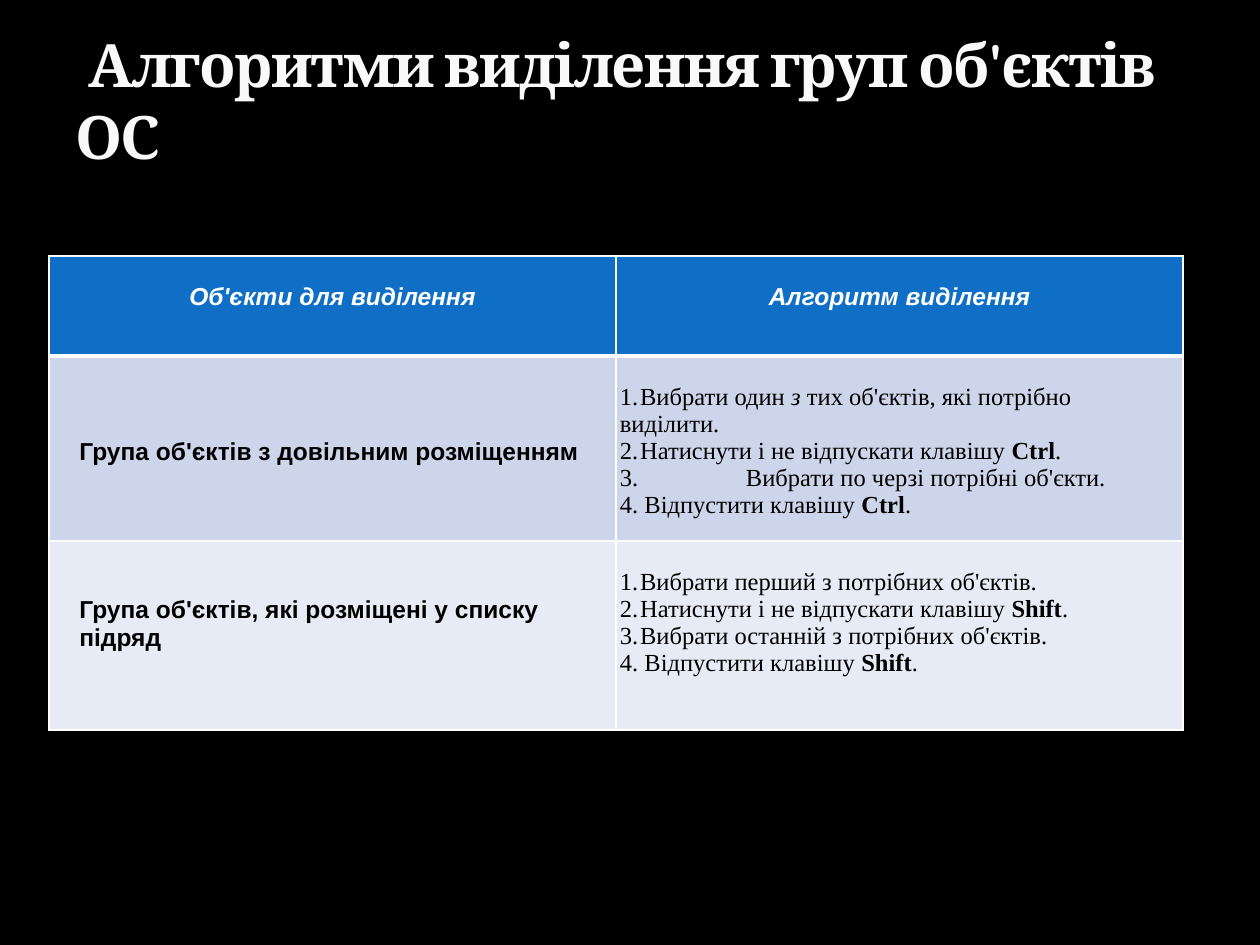
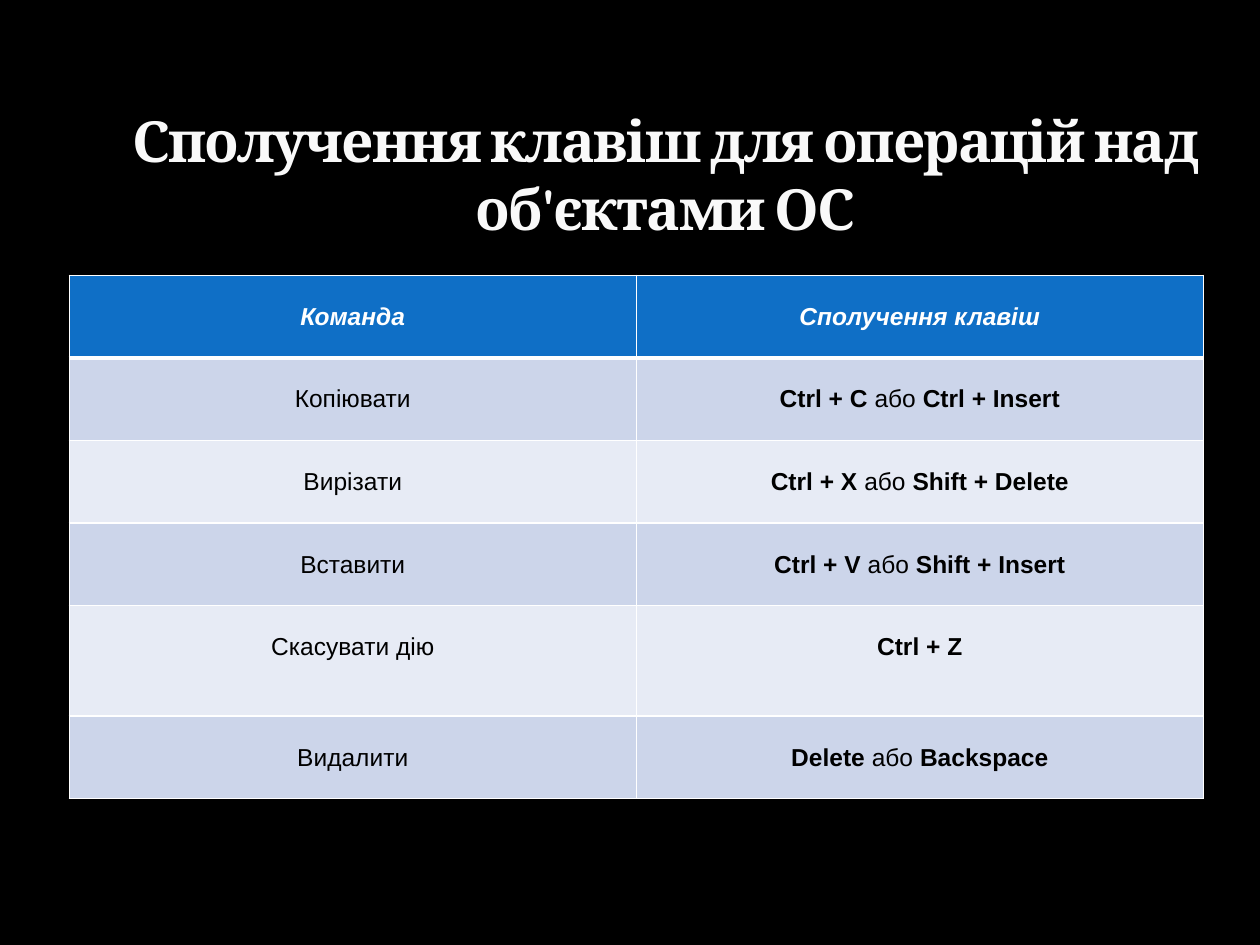
from lxml import etree
from pptx import Presentation
from pptx.dml.color import RGBColor
from pptx.enum.text import MSO_ANCHOR, MSO_AUTO_SIZE, PP_ALIGN
from pptx.oxml.ns import qn
from pptx.util import Emu, Inches, Pt

LEFT, CENTER = PP_ALIGN.LEFT, PP_ALIGN.CENTER
BOTTOM = MSO_ANCHOR.BOTTOM
NO_AUTOFIT = MSO_AUTO_SIZE.NONE
TITLE_ONLY = 5

COLORS = {
    "background": "000000",
    "title": "F9F9F9",
    "title_outline": "04566D",
    "header": "0F6FC6",
    "header_text": "FFFFFF",
    "odd_row": "CCD5EA",
    "even_row": "E7EBF5",
    "text": "000000",
    "border": "FFFFFF",
}
SANS, SERIF, TITLE_FONT = "Arial", "Times New Roman", "Cambria"
TEXT_SIZE = 14
SIDE_INSET = 0.03
LINE_GAP = 0.22
NUMBER_TAB = 0.16
WIDE_TAB = 1


def color(name):
    return RGBColor.from_string(COLORS[name])


def add_solid_fill(line, name, alpha=None):
    fill = etree.SubElement(line, qn("a:solidFill"))
    value = etree.SubElement(fill, qn("a:srgbClr"), val=COLORS[name])
    if alpha:
        etree.SubElement(value, qn("a:alpha"), val=str(alpha * 1000))


def keys(*names):
    """Bold key names joined by a plain word."""
    runs = []
    for index, name in enumerate(names):
        if index:
            runs += [(" або ", "")]
        runs += [(name, "b")]
    return [runs]


class Deck:
    """Holds the style and the current slide; lengths are percent of the slide."""

    def __init__(self):
        self.presentation = Presentation()
        self.presentation.slide_width = Inches(10)
        self.presentation.slide_height = Inches(7.5)
        background = self.presentation.slide_master.background.fill
        background.solid()
        background.fore_color.rgb = color("background")
        self.slide = None

    def across(self, percent):
        return Emu(round(self.presentation.slide_width * percent / 100))

    def down(self, percent):
        return Emu(round(self.presentation.slide_height * percent / 100))

    def add_slide(self):
        layout = self.presentation.slide_layouts[TITLE_ONLY]
        self.slide = self.presentation.slides.add_slide(layout)

    def add_run(self, paragraph, text, font, size, color_name, flags=""):
        run = paragraph.add_run()
        run.text = text
        run.font.name = font
        run.font.size = Pt(size)
        run.font.bold = "b" in flags
        run.font.italic = "i" in flags
        run.font.color.rgb = color(color_name)
        return run

    def add_title(self, text, left, top, size, alignment, indent=0):
        title = self.slide.shapes.title
        title.left, title.top = self.across(left), self.down(top)
        title.width, title.height = self.across(90), self.down(16.53)
        frame = title.text_frame
        frame.auto_size = NO_AUTOFIT
        frame.vertical_anchor = BOTTOM
        paragraph = frame.paragraphs[0]
        paragraph.alignment = alignment
        paragraph._p.get_or_add_pPr().set("indent", str(Inches(indent)))
        run = self.add_run(paragraph, text, TITLE_FONT, size, "title", "b")
        properties = run._r.get_or_add_rPr()
        properties.set("spc", "-100")
        outline = etree.Element(qn("a:ln"), w=str(Pt(0.25)))
        add_solid_fill(outline, "title_outline", alpha=25)
        properties.insert(0, outline)

    def add_table(self, left, top, row_heights):
        height = self.down(sum(row_heights))
        frame = self.slide.shapes.add_table(
            len(row_heights), 2, self.across(left), self.down(top),
            self.across(90), height)
        for row, row_height in zip(frame.table.rows, row_heights):
            row.height = self.down(row_height)
        return frame.table

    def style_cell(self, cell, row, top, left):
        cell.margin_left, cell.margin_right = Inches(left), Inches(SIDE_INSET)
        cell.margin_top, cell.margin_bottom = Inches(top), 0
        properties = cell._tc.get_or_add_tcPr()
        thick_side = {0: "B", 1: "T"}.get(row)
        for side in "LRTB":
            width = Pt(3 if side == thick_side else 1)
            border = etree.SubElement(properties, qn(f"a:ln{side}"), w=str(width))
            add_solid_fill(border, "border")
        fill_name = "header" if row == 0 else ("even_row", "odd_row")[row % 2]
        cell.fill.solid()
        cell.fill.fore_color.rgb = color(fill_name)

    def fill_cell(self, table, row, column, lines, font=SANS, alignment=CENTER,
                  top=LINE_GAP, left=SIDE_INSET, tabs=()):
        """Each line is a list of (text, flags) runs; tabs gives one stop a line."""
        cell = table.cell(row, column)
        self.style_cell(cell, row, top, left)
        color_name = "text" if row else "header_text"
        frame = cell.text_frame
        for index, runs in enumerate(lines):
            paragraph = frame.add_paragraph() if index else frame.paragraphs[0]
            paragraph.alignment = alignment
            if tabs:
                stops = etree.SubElement(paragraph._p.get_or_add_pPr(), qn("a:tabLst"))
                etree.SubElement(stops, qn("a:tab"), pos=str(Inches(tabs[index])), algn="l")
            for text, flags in runs:
                self.add_run(paragraph, text, font, TEXT_SIZE, color_name, flags)

    def fill_header(self, table, labels):
        for column, label in enumerate(labels):
            self.fill_cell(table, 0, column, [[(label, "bi")]])


def build_selection_slide(deck):
    deck.add_slide()
    deck.add_title("Алгоритми виділення груп об'єктів ОС", 5, 2.27, 34.2, LEFT, indent=0.1)
    table = deck.add_table(3.9, 27.07, [10.6, 19.6, 20])
    deck.fill_header(table, ["Об'єкти для виділення", "Алгоритм виділення"])
    groups = [
        (["Група об'єктів з довільним розміщенням"], 0.65),
        (["Група об'єктів, які розміщені у списку", "підряд"], 0.44),
    ]
    for row, (lines, top) in enumerate(groups, start=1):
        deck.fill_cell(table, row, 0, [[(line, "b")] for line in lines],
                       alignment=LEFT, top=top, left=0.24)

    def press(key):
        return [("2.\tНатиснути і не відпускати клавішу ", ""), (key, "b"), (".", "")]

    def release(key):
        return [("4. Відпустити клавішу ", ""), (key, "b"), (".", "")]

    algorithms = [
        ([[("1.\tВибрати один ", ""), ("з ", "i"), ("тих об'єктів, які потрібно", "")],
          [("виділити.", "")],
          press("Ctrl"),
          [("3.\tВибрати по черзі потрібні об'єкти.", "")],
          release("Ctrl")],
         [NUMBER_TAB] * 3 + [WIDE_TAB, NUMBER_TAB]),
        ([[("1.\tВибрати перший з потрібних об'єктів.", "")],
          press("Shift"),
          [("3.\tВибрати останній з потрібних об'єктів.", "")],
          release("Shift")],
         [NUMBER_TAB] * 4),
    ]
    for row, (steps, tabs) in enumerate(algorithms, start=1):
        deck.fill_cell(table, row, 1, steps, font=SERIF, alignment=LEFT, tabs=tabs)


def build_shortcuts_slide(deck):
    deck.add_slide()
    deck.add_title("Сполучення клавіш для операцій над об'єктами ОС", 7.8, 9.73, 32.4, CENTER)
    table = deck.add_table(5.5, 29.15, [8.74] * 4 + [11.7, 8.74])
    deck.fill_header(table, ["Команда", "Сполучення клавіш"])
    shortcuts = [
        ("Копіювати", keys("Ctrl + С", "Ctrl + Insert")),
        ("Вирізати", keys("Ctrl + X", "Shift + Delete")),
        ("Вставити", keys("Ctrl + V", "Shift + Insert")),
        ("Скасувати дію", keys("Ctrl + Z")),
        ("Видалити", keys("Delete", "Backspace")),
    ]
    for row, (command, combination) in enumerate(shortcuts, start=1):
        deck.fill_cell(table, row, 0, [[(command, "")]])
        deck.fill_cell(table, row, 1, combination)


def main():
    deck = Deck()
    build_selection_slide(deck)
    build_shortcuts_slide(deck)
    deck.presentation.save("out.pptx")


if __name__ == "__main__":
    main()
